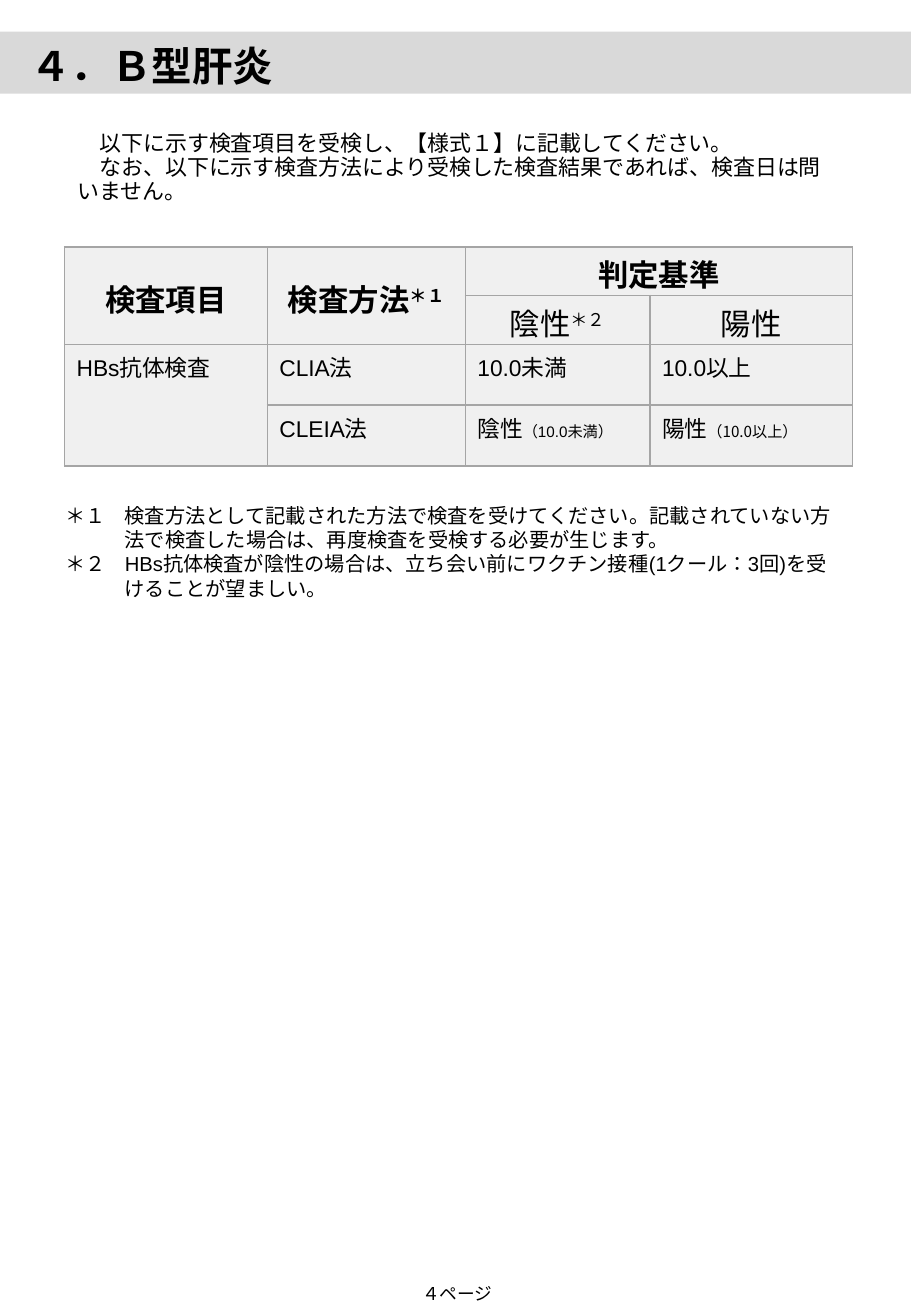
from dataclasses import dataclass

from lxml import etree
from pptx import Presentation
from pptx.dml.color import RGBColor
from pptx.enum.lang import MSO_LANGUAGE_ID
from pptx.enum.shapes import MSO_SHAPE
from pptx.enum.text import MSO_ANCHOR, MSO_AUTO_SIZE, PP_ALIGN
from pptx.oxml import parse_xml
from pptx.oxml.ns import qn
from pptx.util import Cm, Pt

LEFT, CENTER = PP_ALIGN.LEFT, PP_ALIGN.CENTER
TOP, MIDDLE = MSO_ANCHOR.TOP, MSO_ANCHOR.MIDDLE
NO_FIT = MSO_AUTO_SIZE.NONE
RECTANGLE = MSO_SHAPE.RECTANGLE
JAPANESE = MSO_LANGUAGE_ID.JAPANESE
DRAWING = "http://schemas.openxmlformats.org/drawingml/2006/main"


@dataclass(frozen=True)
class Theme:
    ink: str = "000000"
    band: str = "D9D9D9"
    cell: str = "F0F0F0"
    border: str = "A5A5A5"
    font: str = "Arial"
    header_font: str = "Calibri"
    asian_font: str = "Noto Sans CJK JP"
    heading: float = 24
    header: float = 18
    entry: float = 13.5
    intro: float = 13
    note: float = 12
    page_number: float = 10.5
    small: float = 9


THEME = Theme()
PAGE_WIDTH, PAGE_HEIGHT = 19.05, 27.51
COLUMN_WIDTHS = (4.24, 4.14, 3.86, 4.24)
ROW_HEIGHTS = (1, 1, 1.27, 1.27)

INTRO = (
    "以下に示す検査項目を受検し、【様式１】に記載してください。",
    "なお、以下に示す検査方法により受検した検査結果であれば、検査日は問いません。",
)
NOTES = (
    "＊１\t検査方法として記載された方法で検査を受けてください。"
    "記載されていない方法で検査した場合は、再度検査を受検する必要が生じます。",
    "＊２\tHBs抗体検査が陰性の場合は、立ち会い前にワクチン接種"
    "(1クール：3回)を受けることが望ましい。",
)

RAISED = {"raised": True}
SMALL = {"size": THEME.small}
SMALL_ASIAN = {"size": THEME.small, "font": THEME.asian_font}
# (row, column): spans of text, each with its own format
HEADERS = {
    (0, 0): [("検査項目", {})],
    (0, 1): [("検査方法", {}), ("＊１", RAISED)],
    (0, 2): [("判定基準", {})],
    (1, 2): [("陰性", {}), ("＊２", RAISED)],
    (1, 3): [("陽性", {})],
}
ENTRIES = {
    (2, 0): [("HBs抗体検査", {})],
    (2, 1): [("CLIA法", {})],
    (2, 2): [("10.0未満", {})],
    (2, 3): [("10.0以上", {})],
    (3, 1): [("CLEIA法", {})],
    (3, 2): [("陰性", {}), ("（10.0未満）", SMALL)],
    (3, 3): [("陽性", {}), ("（10.0以上）", SMALL_ASIAN)],
}
MERGES = (((0, 0), (1, 0)), ((0, 1), (1, 1)), ((0, 2), (0, 3)), ((2, 0), (3, 0)))


def add_span(para, text, size, font=THEME.font, bold=False, raised=False):
    span = para.add_run()
    span.text = text
    span.font.size = Pt(size)
    span.font.bold = bold
    span.font.name = font
    span.font.color.rgb = RGBColor.from_string(THEME.ink)
    span.font.language_id = JAPANESE
    properties = span._r.get_or_add_rPr()
    asian = etree.SubElement(properties, qn("a:ea"))
    asian.set("typeface", THEME.asian_font)
    if raised:
        properties.set("baseline", "30000")


def write(frame, paragraphs, align=LEFT, anchor=TOP, spacing=None,
          margin=0, indent=0, **style):
    """Fill a frame with paragraphs, each a string or a list of spans."""
    frame.word_wrap = True
    frame.vertical_anchor = anchor
    for index, content in enumerate(paragraphs):
        para = frame.add_paragraph() if index else frame.paragraphs[0]
        para.alignment = align
        para.space_before = Pt(0)
        if spacing:
            para.line_spacing = spacing
        properties = para._p.get_or_add_pPr()
        properties.set("marL", str(Cm(margin)))
        properties.set("indent", str(Cm(indent)))
        etree.SubElement(properties, qn("a:buNone"))
        spans = [(content, {})] if isinstance(content, str) else content
        for text, changes in spans:
            add_span(para, text, **{**style, **changes})


def place(shape, box):
    shape.left, shape.top, shape.width, shape.height = (Cm(v) for v in box)
    shape.text_frame.auto_size = NO_FIT


def add_heading(page, box):
    left, top, width, height = box
    band = page.shapes.add_shape(
        RECTANGLE, Cm(left), Cm(top), Cm(width), Cm(height))
    band.shadow.inherit = False
    band.fill.solid()
    band.fill.fore_color.rgb = RGBColor.from_string(THEME.band)
    band.line.fill.background()
    # Bring the title in front of its band
    title = page.shapes.title
    band._element.addnext(title._element)
    place(title, (left + 0.38, top + 0.08, 14.63, height - 0.03))
    write(title.text_frame, ["４．Ｂ型肝炎"], size=THEME.heading, bold=True)


def add_intro(page, box):
    body = page.placeholders[1]
    place(body, box)
    write(body.text_frame, INTRO, anchor=MIDDLE, spacing=0.9,
          indent=0.46, size=THEME.intro)


def style_cell(cell):
    properties = cell._tc.get_or_add_tcPr()
    for side in ("lnL", "lnR", "lnT", "lnB"):
        properties.append(parse_xml(
            f'<a:{side} xmlns:a="{DRAWING}" w="{Pt(1)}"><a:solidFill>'
            f'<a:srgbClr val="{THEME.border}"/></a:solidFill></a:{side}>'))
    cell.fill.solid()
    cell.fill.fore_color.rgb = RGBColor.from_string(THEME.cell)


def add_criteria_table(page, left, top):
    table = page.shapes.add_table(
        len(ROW_HEIGHTS), len(COLUMN_WIDTHS), Cm(left), Cm(top),
        Cm(sum(COLUMN_WIDTHS)), Cm(sum(ROW_HEIGHTS))).table
    table.horz_banding = False
    for column, width in zip(table.columns, COLUMN_WIDTHS):
        column.width = Cm(width)
    for row, height in zip(table.rows, ROW_HEIGHTS):
        row.height = Cm(height)
    for cell in table.iter_cells():
        style_cell(cell)
    for first, last in MERGES:
        table.cell(*first).merge(table.cell(*last))

    for (row, column), spans in HEADERS.items():
        cell = table.cell(row, column)
        cell.margin_top, cell.margin_bottom = Cm(0.1), Cm(0)
        cell.vertical_anchor = MIDDLE
        write(cell.text_frame, [spans], align=CENTER, anchor=MIDDLE,
              size=THEME.header, font=THEME.header_font, bold=row == 0)
    for position, spans in ENTRIES.items():
        write(table.cell(*position).text_frame, [spans], size=THEME.entry)


def add_text(page, box, paragraphs, **style):
    text_box = page.shapes.add_textbox(*(Cm(v) for v in box))
    write(text_box.text_frame, paragraphs, **style)


def main():
    deck = Presentation()
    deck.slide_width, deck.slide_height = Cm(PAGE_WIDTH), Cm(PAGE_HEIGHT)
    page = deck.slides.add_slide(deck.slide_layouts[1])

    add_heading(page, (0, 0.66, PAGE_WIDTH, 1.3))
    add_intro(page, (1.37, 1.88, 16.43, 3.28))
    add_criteria_table(page, 1.35, 5.16)
    # Footnotes with hanging marks
    add_text(page, (1.12, 10.39, 16.69, 2.31), NOTES,
             margin=1.24, indent=-1.24, size=THEME.note)
    # Page number
    add_text(page, (6.76, 26.7, 5.61, 0.71), ["４ページ"],
             align=CENTER, size=THEME.page_number)
    deck.save("out.pptx")


if __name__ == "__main__":
    main()
